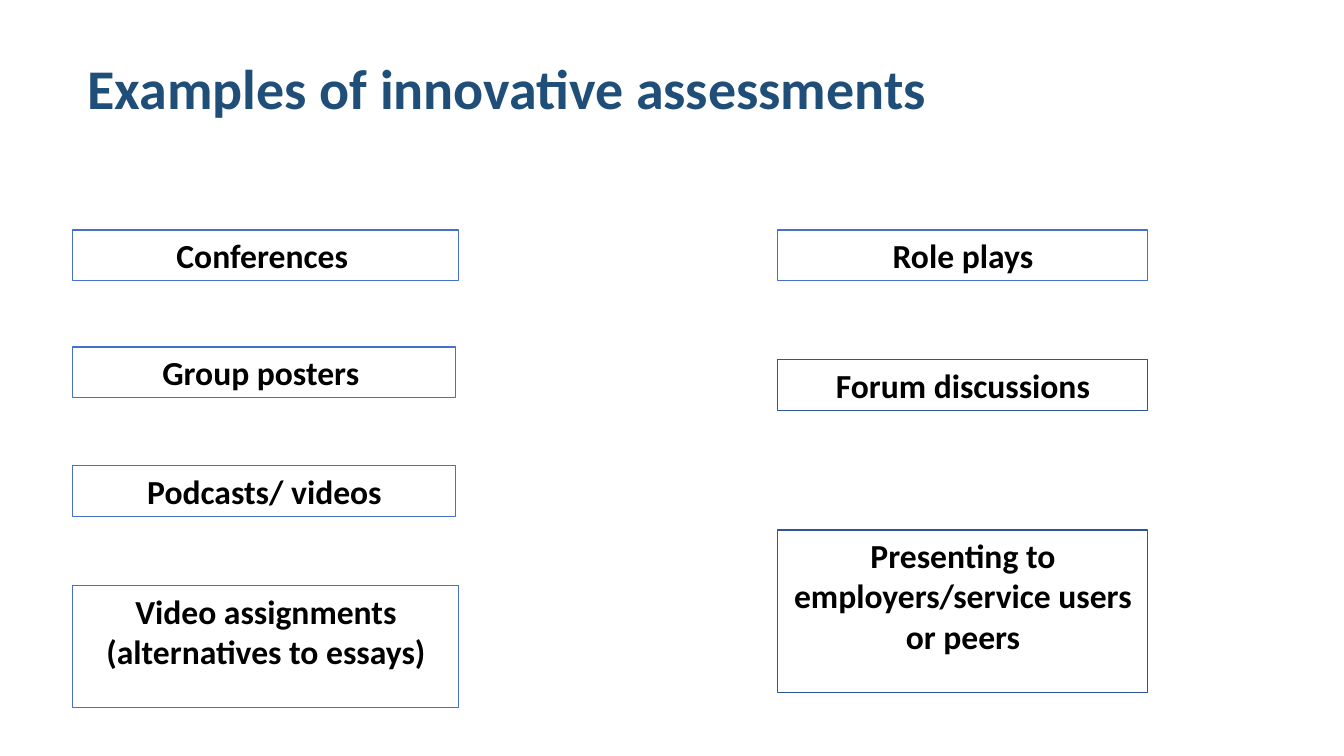
from pptx import Presentation
from pptx.dml.color import RGBColor
from pptx.enum.shapes import MSO_SHAPE
from pptx.enum.text import MSO_ANCHOR, PP_ALIGN
from pptx.util import Emu, Pt

EMU_PER_PX = 914400 / 100.8
SLIDE_SIZE = (1344, 756)

TITLE = "Examples of innovative assessments"
TITLE_BOX = (73, 49, 868, 89)
TITLE_FONT = {"name": "Calibri", "size": Pt(40), "bold": True}
LABEL_FONT = {"name": "Calibri", "size": Pt(24), "bold": True}
NAVY, BLACK, BLUE, DARK_BLUE = "1F4E79", "000000", "4472C4", "2F5597"

# column left -> (text, top, width, height, outline)
COLUMNS = {
    73: [
        ("Conferences ", 230, 386, 51, BLUE),
        ("Group posters ", 347, 383, 51, BLUE),
        ("Podcasts/ videos", 466, 383, 51, BLUE),
        ("Video assignments (alternatives to essays)", 586, 386, 122, BLUE),
    ],
    778: [
        ("Role plays", 230, 370, 51, BLUE),
        ("Forum discussions", 360, 370, 51, DARK_BLUE),
        ("Presenting to employers/service users or peers", 530, 370, 163, DARK_BLUE),
    ],
}


def px(n):
    return Emu(round(n * EMU_PER_PX))


def rgb(value):
    return RGBColor.from_string(value)


def write(s, text, font, color):
    """Put one centred, top-anchored paragraph into a shape."""
    tf = s.text_frame
    tf.word_wrap = True
    tf.vertical_anchor = MSO_ANCHOR.TOP
    p = tf.paragraphs[0]
    p.alignment = PP_ALIGN.CENTER
    r = p.add_run()
    r.text = text
    for key, value in font.items():
        setattr(r.font, key, value)
    r.font.color.rgb = rgb(color)


def add_label(sp, text, box, outline):
    s = sp.add_shape(MSO_SHAPE.RECTANGLE, *map(px, box))
    s.shadow.inherit = False
    s.fill.background()
    s.line.color.rgb = rgb(outline)
    s.line.width = Pt(0.75)
    write(s, text, LABEL_FONT, BLACK)


def main():
    prs = Presentation()
    prs.slide_width, prs.slide_height = map(px, SLIDE_SIZE)
    sp = prs.slides.add_slide(prs.slide_layouts[6]).shapes
    write(sp.add_textbox(*map(px, TITLE_BOX)), TITLE, TITLE_FONT, NAVY)
    for left, labels in COLUMNS.items():
        for text, top, width, height, outline in labels:
            add_label(sp, text, (left, top, width, height), outline)
    prs.save("out.pptx")


if __name__ == "__main__":
    main()
